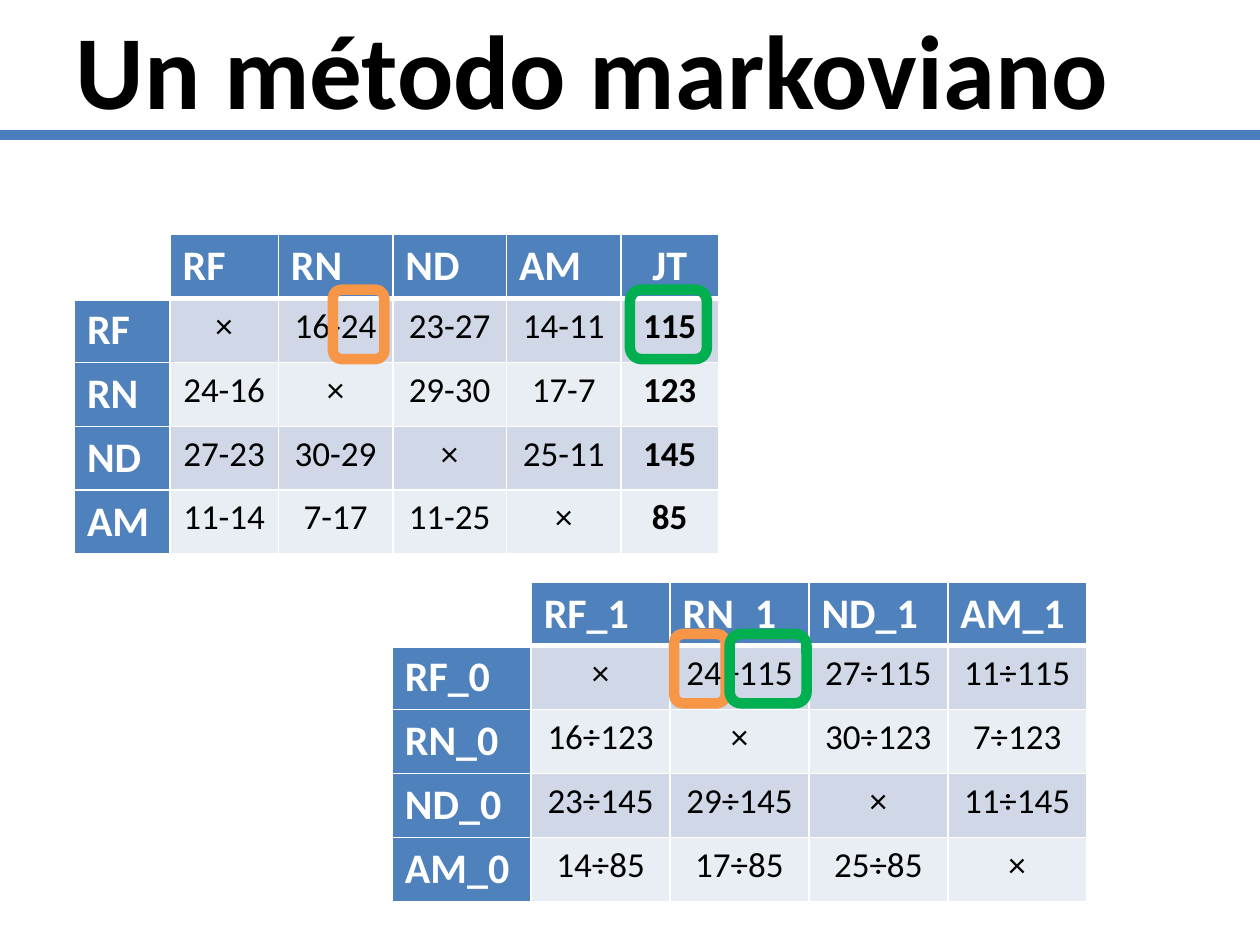
import pptx
import pptx.dml.color
import pptx.enum.shapes
import pptx.enum.text
import pptx.oxml
import pptx.util
from lxml import etree

Cm, Pt = pptx.util.Cm, pptx.util.Pt
RGBColor = pptx.dml.color.RGBColor
Align = pptx.enum.text.PP_ALIGN
Shape = pptx.enum.shapes.MSO_SHAPE
A = "http://schemas.openxmlformats.org/drawingml/2006/main"

BLACK = RGBColor(0x00, 0x00, 0x00)
WHITE = RGBColor(0xFF, 0xFF, 0xFF)
RULE_BLUE = RGBColor(0x4B, 0x7E, 0xBC)
HEADER_BLUE = RGBColor(0x4F, 0x81, 0xBD)
BANDS = (RGBColor(0xD0, 0xD8, 0xE8), RGBColor(0xE9, 0xED, 0xF4))
ORANGE = RGBColor(0xF7, 0x96, 0x46)
GREEN = RGBColor(0x00, 0xB0, 0x50)

TITLE = {"name": "Calibri", "size": Pt(60), "bold": True}
HEADER = {"name": "Calibri", "size": Pt(24), "bold": True}
BODY = {"name": "Calibri", "size": Pt(20), "bold": False}
TOTAL = {**BODY, "bold": True}


class SlideBuilder:
    """Holds the slide and the shared style of its elements."""

    row_height = Cm(1.28)
    frame_width = Pt(6)

    def __init__(self, slide):
        self.slide = slide

    def add_text(self, frame, text, style, color, align):
        paragraph = frame.paragraphs[0]
        paragraph.alignment = align
        run = paragraph.add_run()
        run.text = text
        for attribute, value in style.items():
            setattr(run.font, attribute, value)
        run.font.color.rgb = color

    def title(self, text, left, top, width, height):
        heading = self.slide.shapes.title
        heading.left, heading.top = Cm(left), Cm(top)
        heading.width, heading.height = Cm(width), Cm(height)
        frame = heading.text_frame
        frame.auto_size = pptx.enum.text.MSO_AUTO_SIZE.NONE
        frame.vertical_anchor = pptx.enum.text.MSO_ANCHOR.MIDDLE
        self.add_text(frame, text, TITLE, BLACK, Align.LEFT)

    def rule(self, left, right, y):
        line = self.slide.shapes.add_connector(
            pptx.enum.shapes.MSO_CONNECTOR.STRAIGHT, Cm(left), Cm(y), Cm(right), Cm(y))
        line.line.color.rgb = RULE_BLUE
        line.line.width = self.frame_width
        etree.SubElement(line._element.spPr, f"{{{A}}}effectLst")

    def borders(self, cell, **widths):
        properties = cell._tc.get_or_add_tcPr()
        for side in "LRTB":
            width = Pt(widths.get(side, 1))
            properties.append(pptx.oxml.parse_xml(
                f'<a:ln{side} xmlns:a="{A}" w="{width}"><a:solidFill>'
                f'<a:srgbClr val="{WHITE}"/></a:solidFill></a:ln{side}>'))

    def matrix(self, left, top, widths, rows, total_column=None):
        table = self.slide.shapes.add_table(
            len(rows), len(widths), Cm(left), Cm(top),
            Cm(sum(widths)), self.row_height * len(rows)).table
        table.first_row = table.horz_banding = False
        for column, width in zip(table.columns, widths):
            column.width = Cm(width)
        for r, row in enumerate(rows):
            table.rows[r].height = self.row_height
            for c, text in enumerate(row):
                cell = table.cell(r, c)
                # A thicker line separates the header row
                self.borders(cell, **{0: {"B": 3}, 1: {"T": 3}}.get(r, {}))
                if not text:
                    cell.fill.background()
                    continue
                is_header = r == 0 or c == 0
                is_total = c == total_column
                cell.fill.solid()
                cell.fill.fore_color.rgb = HEADER_BLUE if is_header else BANDS[(r - 1) % 2]
                style = HEADER if is_header else TOTAL if is_total else BODY
                align = Align.LEFT if is_header and not is_total else Align.CENTER
                self.add_text(cell.text_frame, text, style, WHITE if is_header else BLACK, align)

    def highlight(self, left, top, width, color):
        frame = self.slide.shapes.add_shape(
            Shape.ROUNDED_RECTANGLE, Cm(left), Cm(top), Cm(width), Cm(1.4))
        frame.shadow.inherit = False
        frame.fill.background()
        frame.line.color.rgb = color
        frame.line.width = self.frame_width


def main():
    deck = pptx.Presentation()
    deck.slide_width, deck.slide_height = Cm(25.4), Cm(19.05)
    builder = SlideBuilder(deck.slides.add_slide(deck.slide_layouts[5]))

    # Heading
    builder.rule(0, 25.4, 2.72)
    builder.title("Un método markoviano", 1.27, 0, 22.86, 2.72)

    # Results between teams, with row totals
    builder.matrix(1.5, 4.73, (1.93, 2.18, 2.31, 2.29, 2.31, 1.96), (
        ("", "RF", "RN", "ND", "AM", "JT"),
        ("RF", "×", "16-24", "23-27", "14-11", "115"),
        ("RN", "24-16", "×", "29-30", "17-7", "123"),
        ("ND", "27-23", "30-29", "×", "25-11", "145"),
        ("AM", "11-14", "7-17", "11-25", "×", "85"),
    ), total_column=5)

    # Transition probabilities
    builder.matrix(7.91, 11.73, (2.8,) * 5, (
        ("", "RF_1", "RN_1", "ND_1", "AM_1"),
        ("RF_0", "×", "24÷115", "27÷115", "11÷115"),
        ("RN_0", "16÷123", "×", "30÷123", "7÷123"),
        ("ND_0", "23÷145", "29÷145", "×", "11÷145"),
        ("AM_0", "14÷85", "17÷85", "25÷85", "×"),
    ))

    # Matching numbers in both tables
    for color, width, results_left, transition_left in (
            (ORANGE, 1.04, 6.71, 13.59), (GREEN, 1.55, 12.7, 14.71)):
        builder.highlight(results_left, 5.84, width, color)
        builder.highlight(transition_left, 12.78, width, color)

    deck.save("out.pptx")


if __name__ == "__main__":
    main()
